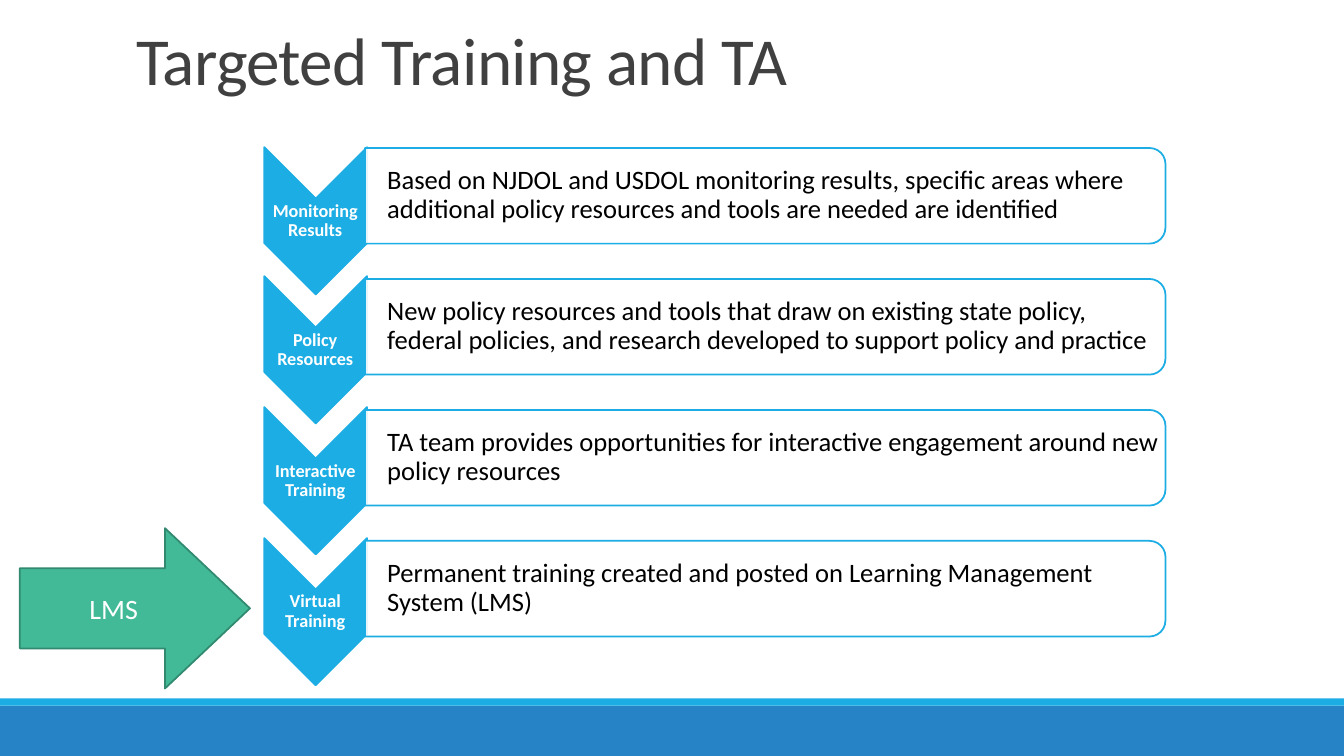
from dataclasses import dataclass

from lxml import etree
from pptx import Presentation
from pptx.dml.color import RGBColor
from pptx.enum import shapes, text
from pptx.oxml import ns
from pptx.util import Cm, Pt


@dataclass(frozen=True)
class Theme:
    font: str = "Calibri"
    blue: str = "2683C6"
    cyan: str = "1CADE4"
    green: str = "42BA97"
    dark_green: str = "318A70"
    white: str = "FFFFFF"
    black: str = "000000"
    gray: str = "404040"
    title_size: int = 48
    arrow_size: int = 20
    body_size: int = 19
    label_size: int = 13
    line_width: float = 1.25


theme = Theme()


def write(holder, words, size, color, bold=False, align=text.PP_ALIGN.LEFT,
          anchor=text.MSO_ANCHOR.MIDDLE, spacing=1.0, insets=(0, 0, 0, 0)):
    """Fill a shape with one formatted paragraph; insets run left, top, right, bottom."""
    frame = holder.text_frame
    frame.word_wrap = True
    frame.auto_size = text.MSO_AUTO_SIZE.NONE
    frame.vertical_anchor = anchor
    frame.margin_left, frame.margin_top, frame.margin_right, frame.margin_bottom = map(Cm, insets)
    paragraph = frame.paragraphs[0]
    paragraph.alignment = align
    paragraph.line_spacing = spacing
    run = paragraph.add_run()
    run.text = words
    run.font.name = theme.font
    run.font.size = Pt(size)
    run.font.bold = bold
    run.font.color.rgb = RGBColor.from_string(color)
    return paragraph


def draw(kind, left, top, width, height, fill, line=None, rotation=0):
    """Add a flat preset shape, measured in centimetres."""
    shape = slide.shapes.add_shape(kind, Cm(left), Cm(top), Cm(width), Cm(height))
    shape.shadow.inherit = False
    shape.rotation = rotation
    shape.fill.solid()
    shape.fill.fore_color.rgb = RGBColor.from_string(fill)
    if line:
        shape.line.color.rgb = RGBColor.from_string(line)
        shape.line.width = Pt(theme.line_width)
    else:
        shape.line.fill.background()
    return shape


prs = Presentation()
prs.slide_width, prs.slide_height = Cm(33.87), Cm(19.05)
slide = prs.slides.add_slide(prs.slide_layouts[5])
preset = shapes.MSO_SHAPE

# Bands along the bottom
draw(preset.RECTANGLE, 0, 17.78, 33.87, 1.27, theme.blue)
draw(preset.RECTANGLE, 0, 17.6, 33.87, 0.18, theme.cyan)

# Title
title = slide.shapes.title
title.left, title.top, title.width, title.height = Cm(3.18), Cm(0.64), Cm(34.87), Cm(4.04)
heading = write(title, "Targeted Training and TA", theme.title_size, theme.gray,
                anchor=text.MSO_ANCHOR.TOP, spacing=0.85, insets=(0.25, 0.13, 0.25, 0.13))
heading.runs[0].font._element.set("spc", "-50")

# Steps: a chevron with its label, then a panel with its description
steps = [
    ("Monitoring Results", "Based on NJDOL and USDOL monitoring results, specific areas where "
     "additional policy resources and tools are needed are identified"),
    ("Policy Resources", "New policy resources and tools that draw on existing state policy, "
     "federal policies, and research developed to support policy and practice"),
    ("Interactive Training", "TA team provides opportunities for interactive engagement around "
     "new policy resources"),
    ("Virtual Training", "Permanent training created and posted on Learning Management "
     "System (LMS)"),
]
row_pitch = 3.3
for row, (step, description) in enumerate(steps):
    offset = row * row_pitch
    chevron_top = 4.22 + offset + (0.05 if row == 0 else 0)  # the first sits slightly lower
    draw(preset.CHEVRON, 6.1, chevron_top, 3.71, 2.59, theme.cyan, theme.cyan, rotation=90)
    label = slide.shapes.add_textbox(Cm(6.65), Cm(chevron_top + 0.74), Cm(2.59), Cm(1.12))
    write(label, step, theme.label_size, theme.white, bold=True, align=text.PP_ALIGN.CENTER,
          spacing=0.9, insets=(0.02, 0.02, 0.02, 0.02))

    panel = draw(preset.ROUND_2_SAME_RECTANGLE, 18.08, -5.15 + offset, 2.41, 20.17,
                 theme.white, theme.cyan, rotation=90)
    fill_color = panel.fill._xPr.find(".//" + ns.qn("a:srgbClr"))
    etree.SubElement(fill_color, ns.qn("a:alpha"), val="90000")
    detail = slide.shapes.add_textbox(Cm(9.2), Cm(3.84 + offset), Cm(20.07), Cm(2.18))
    paragraph = write(detail, description, theme.body_size, theme.black,
                      spacing=0.9, insets=(0.38, 0.02, 0.02, 0.02))
    paragraph._p.get_or_add_pPr().set("marL", str(Cm(0.18)))

# Arrow pointing at the last step
lms_arrow = draw(preset.RIGHT_ARROW, 0.5, 13.31, 5.8, 4.04, theme.green, theme.dark_green)
lms_arrow.adjustments[1] = 0.53
write(lms_arrow, "LMS", theme.arrow_size, theme.white, align=text.PP_ALIGN.CENTER)

prs.save("out.pptx")
